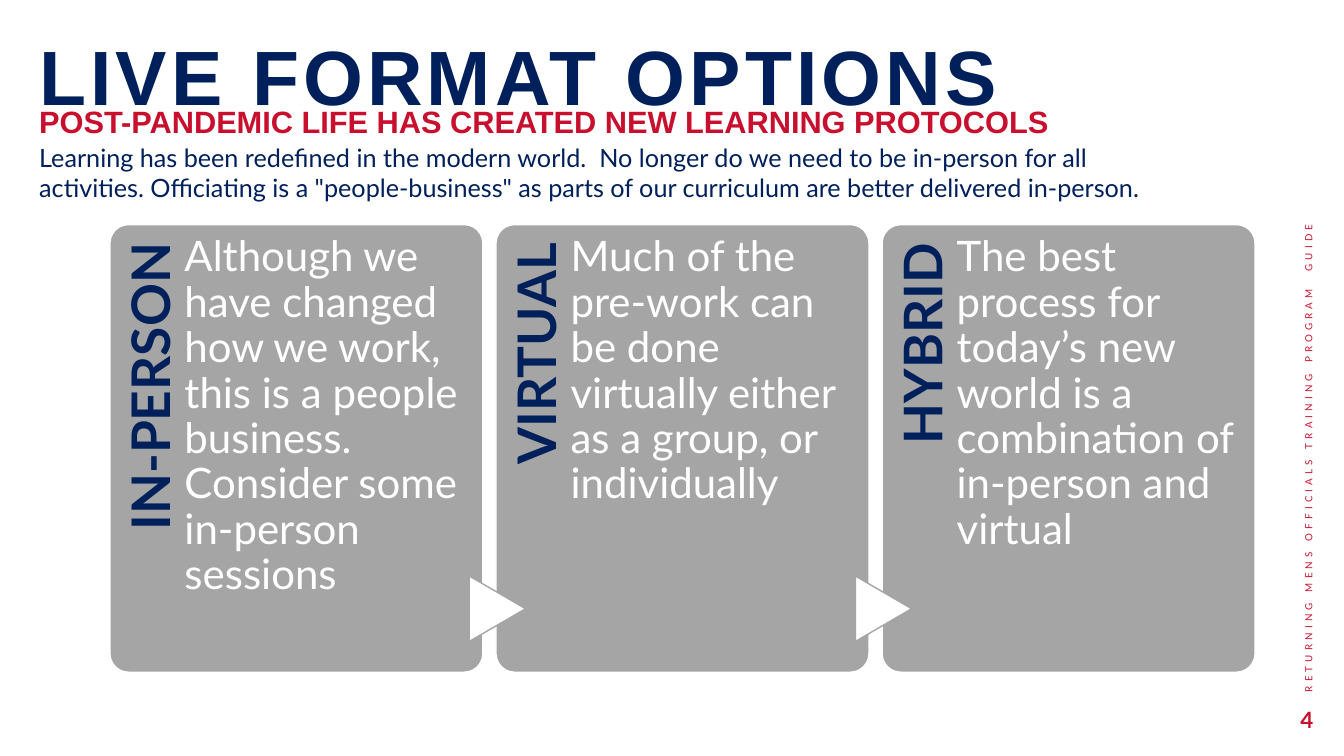
from pptx import Presentation
from pptx.dml.color import RGBColor
from pptx.enum.shapes import MSO_SHAPE
from pptx.enum.text import MSO_ANCHOR, PP_ALIGN
from pptx.util import Cm, Pt

ROUND = MSO_SHAPE.ROUNDED_RECTANGLE
WEDGE = MSO_SHAPE.FLOWCHART_EXTRACT
TOP, MIDDLE = MSO_ANCHOR.TOP, MSO_ANCHOR.MIDDLE
LEFT, RIGHT = PP_ALIGN.LEFT, PP_ALIGN.RIGHT

NAVY, RED, GREY, WHITE = "00205B", "C8102E", "A5A5A5", "FFFFFF"
HEAD, BODY = "Arial", "Lato"
INSETS = (0.25, 0.13, 0.25, 0.13)

CARDS = [
    ("IN-PERSON", "Although we have changed how we work, this is a people business. "
                  "Consider some in-person sessions"),
    ("VIRTUAL", "Much of the pre-work can be done virtually either as a group, "
                "or individually"),
    ("HYBRID", "The best process for today’s new world is a combination of "
               "in-person and virtual"),
]
CARD_X, CARD_Y, CARD_W, CARD_H = 2.77, 5.66, 9.4, 11.28
PITCH = 9.73
LABEL_W, LABEL_H = 9.25, 1.88


def color(code):
    return RGBColor.from_string(code)


class Deck:
    """Holds the presentation and its current slide; lengths are in cm."""

    def __init__(self):
        self.prs = Presentation()
        self.prs.slide_width, self.prs.slide_height = Cm(33.87), Cm(19.05)
        self.slide = self.prs.slides.add_slide(self.prs.slide_layouts[5])
        self.shapes = self.slide.shapes

    def label(self, shape, text, size, tint, font=BODY, bold=False, align=LEFT,
              anchor=TOP, insets=INSETS, line=None, track=0):
        frame = shape.text_frame
        frame.word_wrap = True
        frame.vertical_anchor = anchor
        (frame.margin_left, frame.margin_top,
         frame.margin_right, frame.margin_bottom) = map(Cm, insets)
        para = frame.paragraphs[0]
        para.alignment = align
        if line:
            para.line_spacing = line
        run = para.add_run()
        run.text = text
        run.font.size, run.font.name, run.font.bold = Pt(size), font, bold
        run.font.color.rgb = color(tint)
        if track:
            run.font._element.set("spc", str(track * 100))

    def title(self, text, box, size, tint, **style):
        shape = self.shapes.title
        shape.left, shape.top, shape.width, shape.height = map(Cm, box)
        self.label(shape, text, size, tint, **style)

    def text(self, text, box, size, tint, turn=0, **style):
        shape = self.shapes.add_textbox(*map(Cm, box))
        shape.rotation = turn
        self.label(shape, text, size, tint, **style)

    def shape(self, kind, box, fill, edge, turn=0):
        shape = self.shapes.add_shape(kind, *map(Cm, box))
        shape.shadow.inherit = False
        shape.rotation = turn
        shape.fill.solid()
        shape.fill.fore_color.rgb = color(fill)
        shape.line.color.rgb = color(edge)
        shape.line.width = Pt(1)
        return shape

    def card(self, x, name, body, arrow):
        panel = self.shape(ROUND, (x, CARD_Y, CARD_W, CARD_H), GREY, WHITE)
        panel.adjustments[0] = 0.05
        # The name turns about its centre to stand along the card's left edge.
        shift = (LABEL_W - LABEL_H) / 2
        self.text(name, (x - shift, CARD_Y + shift, LABEL_W, LABEL_H), 38, NAVY,
                  turn=270, bold=True, align=RIGHT, insets=(0, 0.36, 0.46, 0), line=0.9)
        if arrow:
            self.shape(WEDGE, (x - 0.79, 14.63, 1.65, 1.42), WHITE, GREY, turn=90)
        self.text(body, (x + LABEL_H, CARD_Y, 7.01, CARD_H), 30, WHITE,
                  insets=(0, 0.28, 0, 0), line=0.9)


def main():
    deck = Deck()
    deck.title("LIVE FORMAT OPTIONS", (0.74, 0.79, 29.21, 2.46), 55, NAVY,
               font=HEAD, bold=True, anchor=MIDDLE, line=0.9, track=3)
    deck.text("4", (25.73, 17.63, 7.62, 1.02), 16, RED,
              bold=True, align=RIGHT, anchor=MIDDLE)
    for i, (name, body) in enumerate(CARDS):
        deck.card(CARD_X + i * PITCH, name, body, arrow=i > 0)
    deck.text("RETURNING MENS OFFICIALS TRAINING PROGRAM  GUIDE",
              (26.26, 10.69, 13.44, 0.56), 7, RED, turn=270, track=3)
    deck.text("Learning has been redefined in the modern world.  No longer do we need "
              "to be in-person for all activities. Officiating is a \"people-business\" "
              "as parts of our curriculum are better delivered in-person.",
              (0.74, 3.45, 28.83, 1.8), 18, NAVY)
    deck.text("POST-PANDEMIC LIFE HAS CREATED NEW LEARNING PROTOCOLS",
              (0.74, 2.46, 29.46, 1.19), 22, RED, font=HEAD, bold=True)
    deck.prs.save("out.pptx")


if __name__ == "__main__":
    main()
